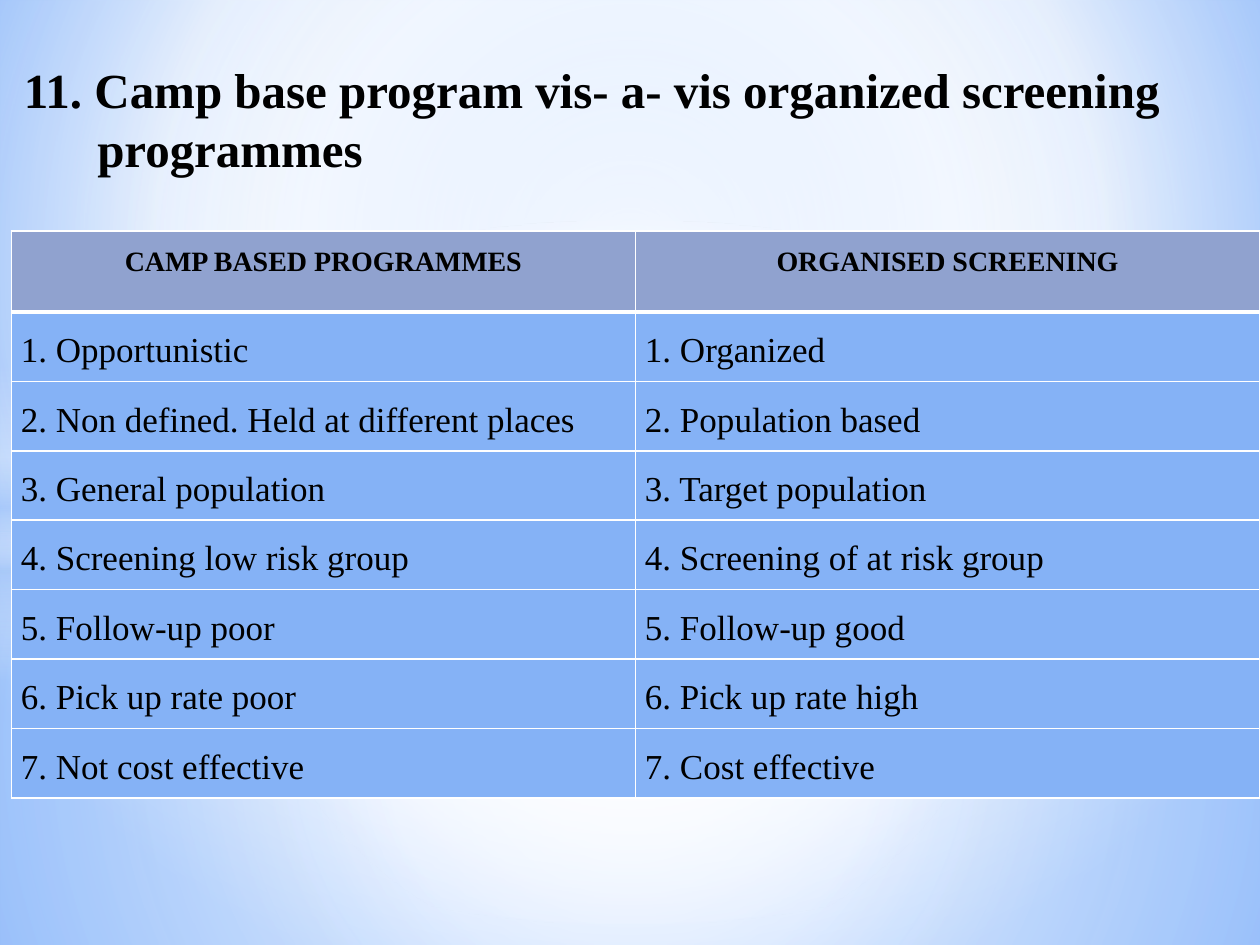
from lxml import etree
from pptx import Presentation
from pptx.dml.color import RGBColor
from pptx.enum.shapes import MSO_SHAPE
from pptx.enum.text import MSO_ANCHOR, PP_ALIGN
from pptx.oxml.ns import qn
from pptx.util import Pt

RECTANGLE, OVAL = MSO_SHAPE.RECTANGLE, MSO_SHAPE.OVAL
CENTER, LEFT = PP_ALIGN.CENTER, PP_ALIGN.LEFT
MIDDLE = MSO_ANCHOR.MIDDLE

COLORS = {
    "white": "FFFFFF", "black": "000000", "pale": "ACCBF9",
    "sky": "95C0FF", "blue": "5599FF", "header": "90A2CF", "body": "85B2F6",
}
TITLE_FORMAT = {"name": "Times New Roman", "size": Pt(28), "bold": True}
HEADER_FORMAT = {"name": "Times New Roman", "size": Pt(16), "bold": True}
BODY_FORMAT = {"name": "Times New Roman", "size": Pt(20), "bold": False}
CELL_MARGINS = {"margin_left": Pt(5.4), "margin_right": Pt(5.4),
                "margin_top": 0, "margin_bottom": 0}

CENTERED = (50, 50, 50, 50)
# Soft background layers: preset, box, stops (position, colour, opacity), focus
LAYERS = [
    (RECTANGLE, (0, 304.5, 720, 235.5),
     [(0, "white", 91), (37, "white", 76), (100, "pale", 79)], CENTERED),
    (RECTANGLE, (0, 0, 720, 304.5),
     [(0, "white", 89), (48, "white", 62), (100, "pale", 79)], CENTERED),
    (RECTANGLE, (0, 209, 720, 180),
     [(0, "white", 0), (29, "white", 30), (45, "pale", 40),
      (55, "white", 26), (65, "pale", 60), (100, "white", 0)], None),
    (OVAL, (0, 126, 720, 402),
     [(0, "white", 100), (54, "white", 0)], CENTERED),
]
HEADERS = ("CAMP BASED PROGRAMMES", "ORGANISED SCREENING")
COMPARISON = [
    ("Opportunistic", "Organized"),
    ("Non defined. Held at different places", "Population based"),
    ("General population", "Target population"),
    ("Screening low risk group", "Screening of at risk group"),
    ("Follow-up poor", "Follow-up good"),
    ("Pick up rate poor", "Pick up rate high"),
    ("Not cost effective", "Cost effective"),
]


def rgb(name):
    return RGBColor.from_string(COLORS[name])


def add_child(parent, tag, **attributes):
    return etree.SubElement(parent, qn(tag),
                            {key: str(value) for key, value in attributes.items()})


def set_gradient(fill, properties, stops, focus):
    """Radial gradient around focus (l, t, r, b), or downward when focus is None."""
    fill.solid()
    solid = properties.find(qn("a:solidFill"))
    gradient = etree.Element(qn("a:gradFill"), rotWithShape="1")
    stop_list = add_child(gradient, "a:gsLst")
    for position, color, opacity in stops:
        stop = add_child(stop_list, "a:gs", pos=position * 1000)
        value = add_child(stop, "a:srgbClr", val=COLORS[color])
        if opacity < 100:
            add_child(value, "a:alpha", val=opacity * 1000)
    if focus:
        circle = add_child(gradient, "a:path", path="circle")
        add_child(circle, "a:fillToRect",
                  **{side: share * 1000 for side, share in zip("ltrb", focus)})
    else:
        add_child(gradient, "a:lin", ang=5400000, scaled=0)
    properties.replace(solid, gradient)


def add_layer(slide, preset, box, stops, focus):
    shape = slide.shapes.add_shape(preset, *map(Pt, box))
    shape.shadow.inherit = False
    shape.line.fill.background()
    set_gradient(shape.fill, shape._element.spPr, stops, focus)


def write_text(paragraph, text, text_format, alignment=LEFT):
    paragraph.alignment = alignment
    run = paragraph.add_run()
    run.text = text
    for name, value in text_format.items():
        setattr(run.font, name, value)
    run.font.color.rgb = rgb("black")


def add_title(slide):
    frame = slide.shapes.add_textbox(Pt(6.5), Pt(30), Pt(702), Pt(75)).text_frame
    frame.word_wrap = True
    frame.vertical_anchor = MIDDLE
    write_text(frame.paragraphs[0],
               "11. Camp base program vis- a- vis organized screening", TITLE_FORMAT)
    second_line = frame.add_paragraph()
    write_text(second_line, "programmes", TITLE_FORMAT)
    second_line._p.get_or_add_pPr().set("marL", str(Pt(42)))


def set_borders(cell, bottom_width):
    properties = cell._tc.get_or_add_tcPr()
    for side, width in {"L": 1, "R": 1, "T": 1, "B": bottom_width}.items():
        line = add_child(properties, f"a:ln{side}", w=Pt(width))
        add_child(add_child(line, "a:solidFill"), "a:srgbClr", val=COLORS["white"])


def fill_cell(cell, text, is_header):
    for name, value in CELL_MARGINS.items():
        setattr(cell, name, value)
    set_borders(cell, 3 if is_header else 1)
    cell.fill.solid()
    cell.fill.fore_color.rgb = rgb("header" if is_header else "body")
    paragraph = cell.text_frame.paragraphs[0]
    paragraph.line_spacing = 1.5
    write_text(paragraph, text, HEADER_FORMAT if is_header else BODY_FORMAT,
               CENTER if is_header else LEFT)


def add_comparison_table(slide):
    header_height, row_height = Pt(46.3), Pt(39.67)
    row_count = len(COMPARISON) + 1
    table = slide.shapes.add_table(
        row_count, 2, Pt(6.5), Pt(132), Pt(713.4),
        header_height + row_height * len(COMPARISON)).table
    for index, row in enumerate(table.rows):
        row.height = row_height if index else header_height
        texts = [f"{index}. {text}" for text in COMPARISON[index - 1]] if index else HEADERS
        for cell, text in zip(row.cells, texts):
            fill_cell(cell, text, is_header=index == 0)


def main():
    presentation = Presentation()
    presentation.slide_width, presentation.slide_height = Pt(720), Pt(540)
    slide = presentation.slides.add_slide(presentation.slide_layouts[6])

    # Background glow
    background_fill = slide.background.fill
    background_fill.solid()
    set_gradient(background_fill, slide._element.cSld.bg.bgPr,
                 [(0, "sky", 100), (60, "white", 100), (100, "blue", 100)],
                 (20, 10, 20, 60))
    for layer in LAYERS:
        add_layer(slide, *layer)

    # Content
    add_comparison_table(slide)
    add_title(slide)
    presentation.save("out.pptx")


if __name__ == "__main__":
    main()
